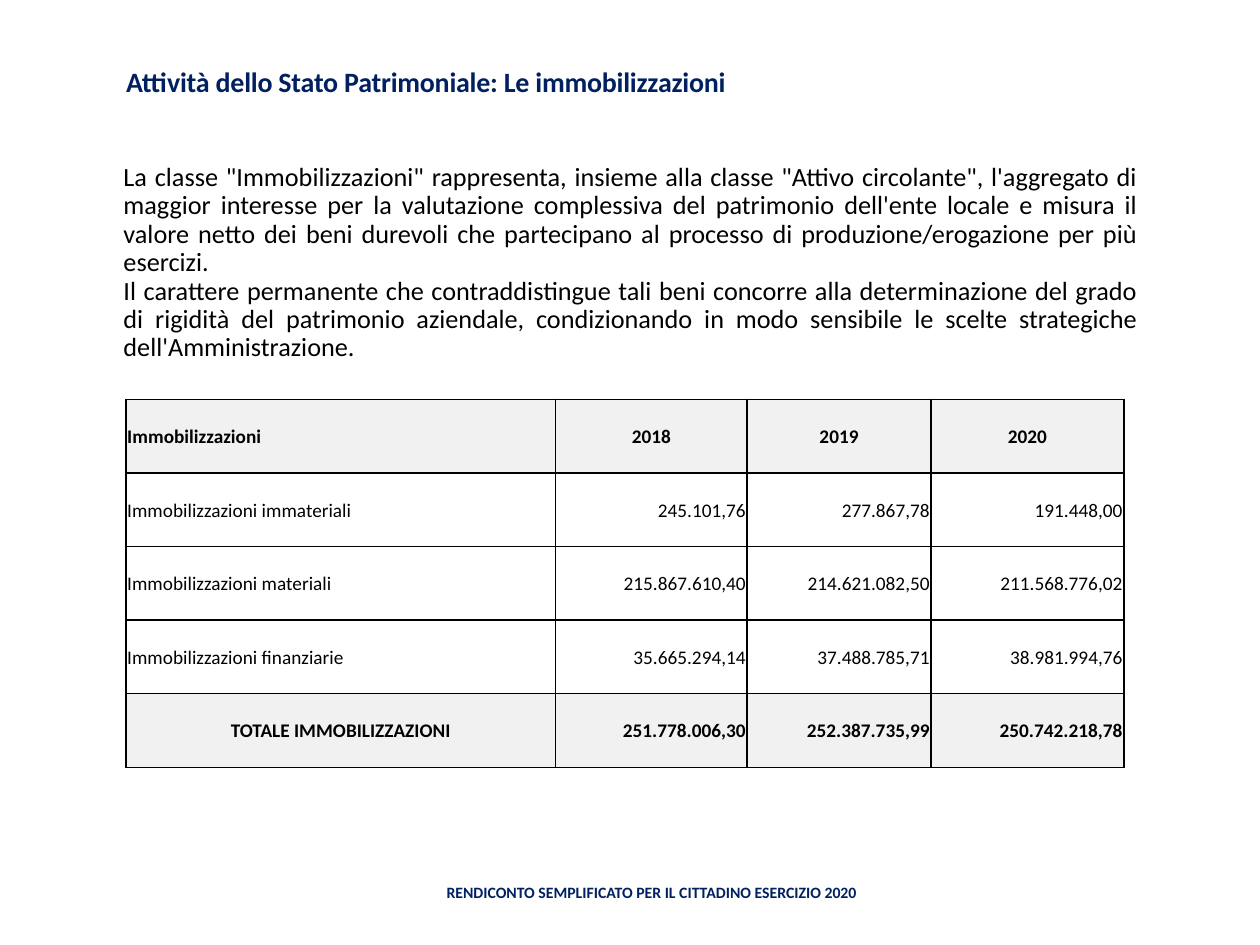
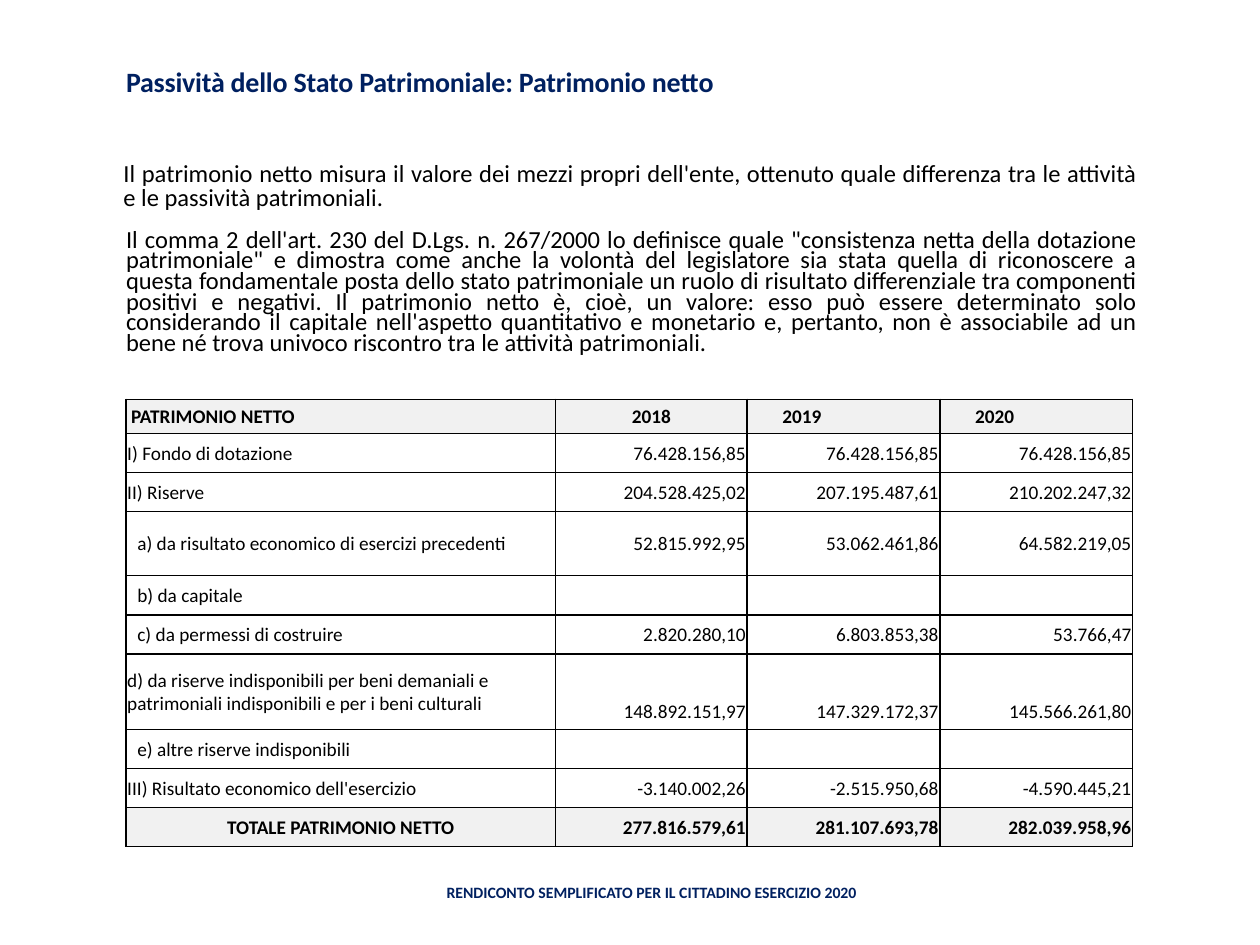
"""Build two balance-sheet slides: fixed assets and net equity."""
from dataclasses import dataclass

from lxml.etree import SubElement
from pptx import Presentation
from pptx.dml.color import RGBColor
from pptx.enum.text import MSO_ANCHOR, MSO_AUTO_SIZE, PP_ALIGN
from pptx.oxml import parse_xml
from pptx.oxml.ns import nsdecls, qn
from pptx.util import Inches, Pt


@dataclass(frozen=True)
class Theme:
    font: str = "Calibri"
    navy: str = "002060"
    ink: str = "000000"
    band: str = "F1F1F1"
    bullet: str = "E48312"
    title_size: int = 16
    cell_size: int = 11
    footer_size: int = 9
    border: int = 1


theme = Theme()
deck = Presentation()
deck.slide_width, deck.slide_height = Inches(10), Inches(7.5)
column, row = deck.slide_width // 100, deck.slide_height // 75


def write(paragraph, text, size, color=theme.ink, bold=False, align=PP_ALIGN.LEFT,
          line=1.0, before=0, after=0, tracking=0):
    """Put text in a paragraph with the given format."""
    paragraph.alignment, paragraph.line_spacing = align, line
    paragraph.space_before, paragraph.space_after = Pt(before), Pt(after)
    run = paragraph.add_run()
    run.text = text
    run.font.name, run.font.size, run.font.bold = theme.font, Pt(size), bold
    run.font.color.rgb = RGBColor.from_string(color)
    if tracking:
        run.font._element.set("spc", str(tracking))


def draw_borders(cell, hidden):
    """Outline a cell, leaving out the hidden sides."""
    properties = cell._tc.get_or_add_tcPr()
    for position, side in enumerate("LRTB"):
        paint = ("<a:noFill/>" if side in hidden else
                 f'<a:solidFill><a:srgbClr val="{theme.ink}"/></a:solidFill>')
        properties.insert(position, parse_xml(
            f'<a:ln{side} {nsdecls("a")} w="{Pt(theme.border)}">{paint}</a:ln{side}>'))


footer_text = "RENDICONTO SEMPLIFICATO PER IL CITTADINO ESERCIZIO 2020"
pages = [
    {
        "title": "Attività dello Stato Patrimoniale: Le immobilizzazioni",
        "body": [
            ("La classe \"Immobilizzazioni\" rappresenta, insieme alla classe \"Attivo "
             "circolante\", l'aggregato di maggior interesse per la valutazione complessiva "
             "del patrimonio dell'ente locale e misura il valore netto dei beni durevoli che "
             "partecipano al processo di produzione/erogazione per più esercizi.",
             0.8, dict(size=15, line=0.9, before=12)),
            ("Il carattere permanente che contraddistingue tali beni concorre alla "
             "determinazione del grado di rigidità del patrimonio aziendale, condizionando "
             "in modo sensibile le scelte strategiche dell'Amministrazione.",
             0.8, dict(size=15, line=0.9, before=0.1)),
        ],
        "columns": [34.1, 15.2, 14.6, 15.3],
        "year_insets": [0.1, 0.1, 0.1],
        "rows": [
            (5.84, 0.1, "Immobilizzazioni", "2018", "2019", "2020"),
            (5.84, 0.1, "Immobilizzazioni immateriali",
             "245.101,76", "277.867,78", "191.448,00"),
            (5.84, 0.1, "Immobilizzazioni materiali",
             "215.867.610,40", "214.621.082,50", "211.568.776,02"),
            (5.84, 0.1, "Immobilizzazioni finanziarie",
             "35.665.294,14", "37.488.785,71", "38.981.994,76"),
            (5.84, 0.1, "TOTALE IMMOBILIZZAZIONI",
             "251.778.006,30", "252.387.735,99", "250.742.218,78"),
        ],
    },
    {
        "title": "Passività dello Stato Patrimoniale: Patrimonio netto",
        "body": [
            ("Il patrimonio netto misura il valore dei mezzi propri dell'ente, ottenuto "
             "quale differenza tra le attività e le passività patrimoniali.",
             0.8, dict(size=14, line=0.8, before=12)),
            ("Il comma 2 dell'art. 230 del D.Lgs. n. 267/2000 lo definisce quale "
             "\"consistenza netta della dotazione patrimoniale\" e dimostra come anche la "
             "volontà del legislatore sia stata quella di riconoscere a questa fondamentale "
             "posta dello stato patrimoniale un ruolo di risultato differenziale tra "
             "componenti positivi e negativi. Il patrimonio netto è, cioè, un valore: esso "
             "può essere determinato solo considerando il capitale nell'aspetto quantitativo "
             "e monetario e, pertanto, non è associabile ad un bene né trova univoco "
             "riscontro tra le attività patrimoniali.",
             1, dict(size=14, line=0.7, before=12, after=2)),
        ],
        "columns": [34.1, 15.2, 15.3, 15.3],
        "year_insets": [0.1, 2.8, 2.8],
        "rows": [
            (2.7, 0.4, "PATRIMONIO NETTO", "2018", "2019", "2020"),
            (3.1, 0.1, "I) Fondo di dotazione",
             "76.428.156,85", "76.428.156,85", "76.428.156,85"),
            (3.1, 0.1, "II) Riserve", "204.528.425,02", "207.195.487,61", "210.202.247,32"),
            (5.1, 0.9, "a) da risultato economico di esercizi precedenti",
             "52.815.992,95", "53.062.461,86", "64.582.219,05"),
            (3.1, 0.9, "b) da capitale", "", "", ""),
            (3.1, 0.9, "c) da permessi di costruire",
             "2.820.280,10", "6.803.853,38", "53.766,47"),
            (3.1, 0.1, "d) da riserve indisponibili per beni demaniali e patrimoniali "
             "indisponibili e per i beni culturali", "", "", ""),
            (2.9, 0.1, "", "148.892.151,97", "147.329.172,37", "145.566.261,80"),
            (3.1, 0.9, "e) altre riserve indisponibili", "", "", ""),
            (3.1, 0.1, "III) Risultato economico dell'esercizio",
             "-3.140.002,26", "-2.515.950,68", "-4.590.445,21"),
            (3.1, 0.1, "TOTALE PATRIMONIO NETTO",
             "277.816.579,61", "281.107.693,78", "282.039.958,96"),
        ],
    },
]

for page in pages:
    slide = deck.slides.add_slide(deck.slide_layouts[1])
    heading, body = slide.placeholders
    for holder, top, height in ((heading, 3.1, 5.2), (body, 12.5, 19.2)):
        holder.left, holder.top = int(9 * column), int(top * row)
        holder.width, holder.height = int(82.5 * column), int(height * row)
        holder.text_frame.word_wrap = True
        holder.text_frame.auto_size = MSO_AUTO_SIZE.NONE

    heading.text_frame.vertical_anchor = MSO_ANCHOR.BOTTOM
    write(heading.text_frame.paragraphs[0], page["title"], size=theme.title_size,
          color=theme.navy, bold=True, line=0.85, tracking=-10)

    prose = body.text_frame
    prose.margin_left, prose.margin_right = 0, int(1.2 * column)
    for index, (text, indent, style) in enumerate(page["body"]):
        paragraph = prose.add_paragraph() if index else prose.paragraphs[0]
        write(paragraph, text, align=PP_ALIGN.JUSTIFY, **style)
        properties = paragraph._p.get_or_add_pPr()
        properties.set("marL", str(int(indent * column)))
        properties.set("indent", str(-column))
        SubElement(SubElement(properties, qn("a:buClr")), qn("a:srgbClr"), val=theme.bullet)
        SubElement(properties, qn("a:buChar"), char=" ")

    footer = slide.shapes.add_textbox(int(31.9 * column), int(68.3 * row),
                                      int(39.6 * column), 5 * row).text_frame
    footer.word_wrap = True
    footer.vertical_anchor = MSO_ANCHOR.MIDDLE
    write(footer.paragraphs[0], footer_text, size=theme.footer_size, color=theme.navy,
          bold=True, align=PP_ALIGN.CENTER)

    accounts, widths = page["rows"], page["columns"]
    last = len(accounts) - 1
    table = slide.shapes.add_table(
        len(accounts), len(widths), 10 * column, int(31.7 * row), int(sum(widths) * column),
        int(sum(account[0] for account in accounts) * row)).table
    table.first_row = table.horz_banding = False
    for table_column, width in zip(table.columns, widths):
        table_column.width = int(width * column)

    for line, (height, label_inset, *entries) in enumerate(accounts):
        table.rows[line].height = int(height * row)
        banded = line in (0, last)
        continued = line < last and not accounts[line + 1][2]
        for place, entry in enumerate(entries):
            cell = table.cell(line, place)
            inset, align = 0.1, PP_ALIGN.RIGHT
            if place == 0:
                inset = label_inset
                align = PP_ALIGN.CENTER if line == last else PP_ALIGN.LEFT
            elif line == 0:
                inset = page["year_insets"][place - 1]
                align = PP_ALIGN.LEFT if inset > 1 else PP_ALIGN.CENTER
            cell.margin_left, cell.margin_right = int(inset * column), int(0.1 * column)
            cell.margin_top, cell.margin_bottom = int(0.1 * row), 0
            cell.vertical_anchor = MSO_ANCHOR.MIDDLE
            if banded:
                cell.fill.solid()
                cell.fill.fore_color.rgb = RGBColor.from_string(theme.band)
            else:
                cell.fill.background()
            hidden = ("B" if continued and place else "") + ("" if entries[0] or not place else "T")
            draw_borders(cell, hidden)
            write(cell.text_frame.paragraphs[0], entry, size=theme.cell_size,
                  bold=banded, align=align)
        if not entries[0]:
            table.cell(line - 1, 0).merge(table.cell(line, 0))

deck.save("out.pptx")
